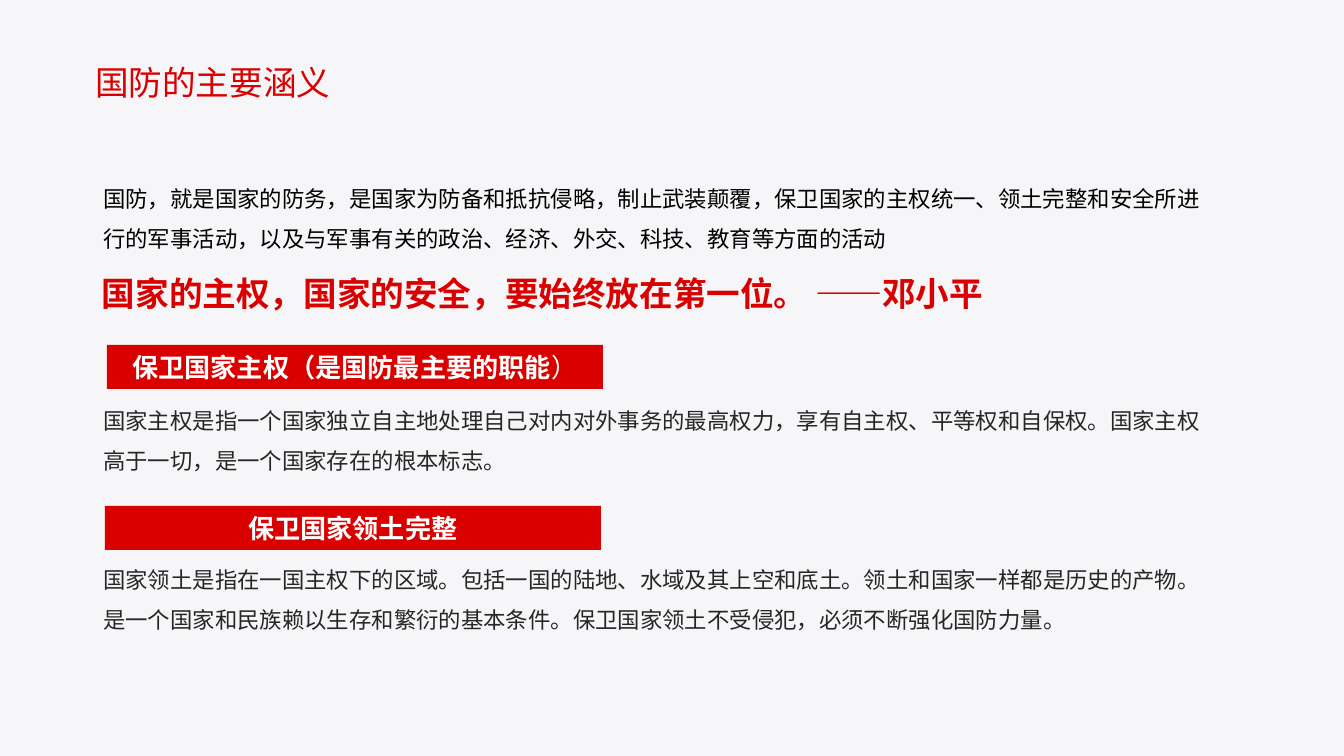
import pptx
import pptx.dml.color
import pptx.enum.shapes
import pptx.enum.text
import pptx.util

EMU_PER_PX = 914400 / 134.4
RED, WHITE, BLACK, GREY = "DA0000", "FFFFFF", "000000", "262626"
SANS, CJK = "Arial", "Noto Sans CJK SC"


def px(n):
    return pptx.util.Emu(round(n * EMU_PER_PX))


def rgb(value):
    return pptx.dml.color.RGBColor.from_string(value)


class Deck:
    """Holds the style and the current slide."""

    title = {"size": 18, "name": SANS, "color": RED}
    intro = {"size": 12, "name": CJK, "color": BLACK}
    quote = {"size": 18, "name": CJK, "color": RED, "bold": True}
    heading = {"size": 14, "name": SANS, "color": WHITE, "bold": True}
    body = {"size": 12, "name": SANS, "color": GREY}

    def __init__(self, width, height, background):
        self.prs = pptx.Presentation()
        self.prs.slide_width, self.prs.slide_height = px(width), px(height)
        self.s = self.prs.slides.add_slide(self.prs.slide_layouts[6])
        fill = self.s.background.fill
        fill.solid()
        fill.fore_color.rgb = rgb(background)

    def run(self, p, text, style):
        r = p.add_run()
        r.text = text
        for key, value in style.items():
            if key == "color":
                r.font.color.rgb = rgb(value)
            elif key == "size":
                r.font.size = pptx.util.Pt(value)
            else:
                setattr(r.font, key, value)

    def text(self, box, text, style, wrap=True, grow=True, spacing=None):
        tf = self.s.shapes.add_textbox(*map(px, box)).text_frame
        tf.word_wrap = wrap
        if grow:
            tf.auto_size = pptx.enum.text.MSO_AUTO_SIZE.SHAPE_TO_FIT_TEXT
        p = tf.paragraphs[0]
        if spacing:
            p.line_spacing = spacing
        self.run(p, text, style)

    def bar(self, box, text, plain_end=""):
        sp = self.s.shapes.add_shape(
            pptx.enum.shapes.MSO_SHAPE.RECTANGLE, *map(px, box))
        sp.shadow.inherit = False
        sp.fill.solid()
        sp.fill.fore_color.rgb = rgb(RED)
        sp.line.fill.background()
        tf = sp.text_frame
        tf.word_wrap = True
        tf.vertical_anchor = pptx.enum.text.MSO_ANCHOR.MIDDLE
        p = tf.paragraphs[0]
        p.alignment = pptx.enum.text.PP_ALIGN.CENTER
        self.run(p, text, self.heading)
        if plain_end:
            self.run(p, plain_end, {**self.heading, "bold": False})


def main():
    deck = Deck(1344, 756, "F6F6F8")

    # Title
    deck.text((82, 55, 265, 54), "国防的主要涵义", deck.title, wrap=False)

    # Definition and quotation
    deck.text((90, 165, 1142, 101),
              "国防，就是国家的防务，是国家为防备和抵抗侵略，制止武装颠覆，"
              "保卫国家的主权统一、领土完整和安全所进行的军事活动，"
              "以及与军事有关的政治、经济、外交、科技、教育等方面的活动",
              deck.intro, grow=False, spacing=1.5)
    deck.text((81, 266, 1085, 54),
              " 国家的主权，国家的安全，要始终放在第一位。 ——邓小平", deck.quote)

    # Duties: a red heading bar with an explanation below
    duties = [
        ((107, 345), "保卫国家主权（是国防最主要的职能", "）", (387, 95),
         "国家主权是指一个国家独立自主地处理自己对内对外事务的最高权力，"
         "享有自主权、平等权和自保权。国家主权高于一切，"
         "是一个国家存在的根本标志。"),
        ((105, 506), "保卫国家领土完整", "", (546, 90),
         "国家领土是指在一国主权下的区域。包括一国的陆地、水域及其上空和底土。"
         "领土和国家一样都是历史的产物。是一个国家和民族赖以生存和繁衍的基本条件。"
         "保卫国家领土不受侵犯，必须不断强化国防力量。"),
    ]
    for corner, heading, plain_end, (top, height), body in duties:
        deck.bar((*corner, 496, 44), heading, plain_end)
        deck.text((90, top, 1140, height), body, deck.body, spacing=1.5)

    deck.prs.save("out.pptx")


if __name__ == "__main__":
    main()
